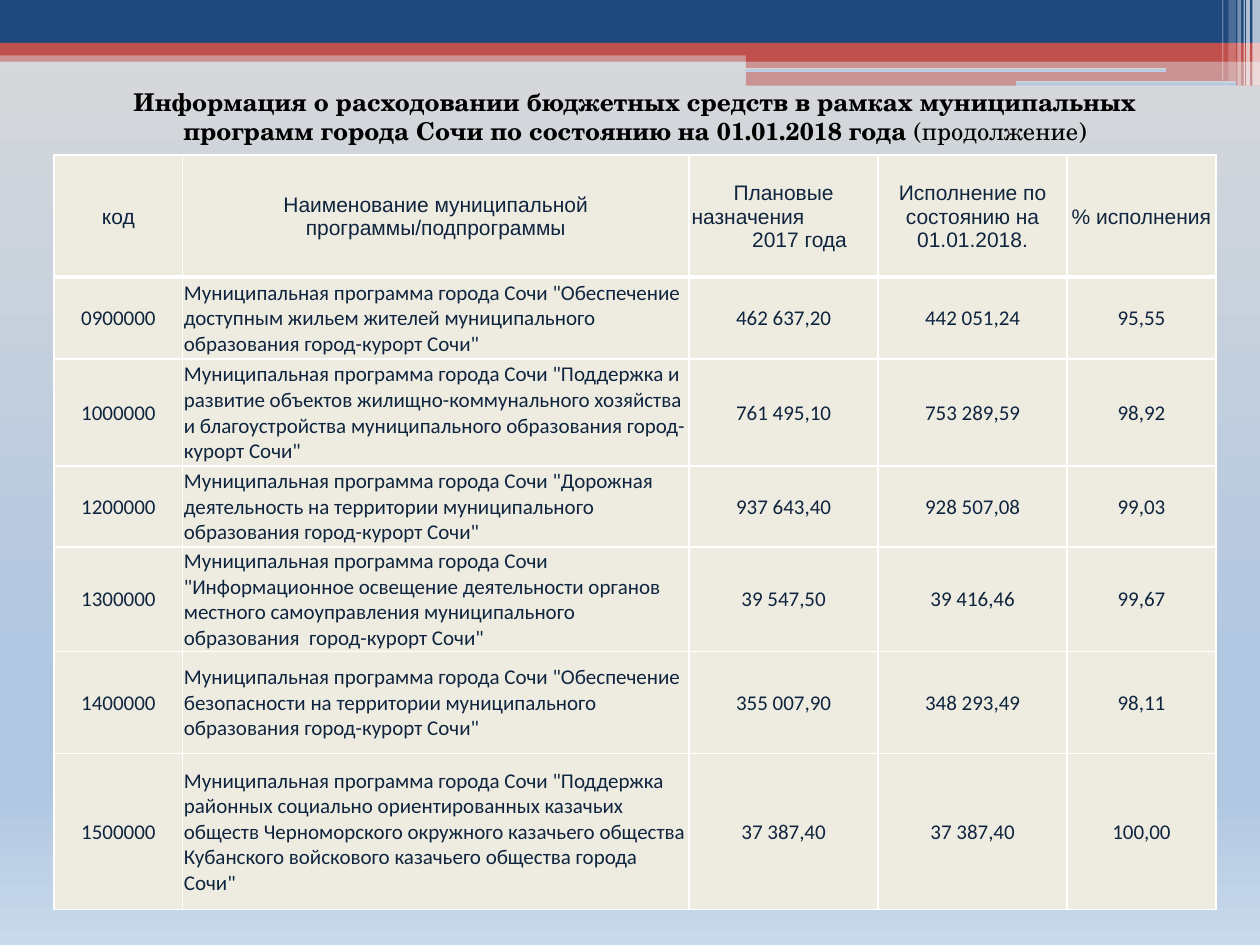
from lxml import etree
from pptx import Presentation
from pptx.dml.color import RGBColor
from pptx.enum.shapes import MSO_SHAPE
from pptx.enum.text import MSO_ANCHOR, PP_ALIGN
from pptx.oxml.ns import qn
from pptx.util import Inches, Pt

RECT, ROUNDED = MSO_SHAPE.RECTANGLE, MSO_SHAPE.ROUNDED_RECTANGLE
LEFT, CENTER = PP_ALIGN.LEFT, PP_ALIGN.CENTER
MIDDLE = MSO_ANCHOR.MIDDLE

NAVY, RED, WHITE, CREAM, INK = "1F497D", "C0504D", "FFFFFF", "EEECE1", "0F243E"
SKY = [(0, "D9D9D9"), (74, "B0C6E1"), (83, "B0C6E1"), (100, "CAD9EB")]

# left, top, width, height, colour, opacity in percent
BANDS = [
    (0, 0.4, 10, 0.09, RED, 50),
    (0, 0, 10, 0.34, NAVY, 100),
    (0, 0.34, 10, 0.1, RED, 100),
    (5.92, 0.39, 4.08, 0.1, RED, 100),
    (5.92, 0.48, 4.08, 0.2, RED, 50),
]
SLOTS = [(5.91, 0.54, 3.35, 0.03), (8.06, 0.64, 1.75, 0.04)]
# left, width, height, opacity in percent
STRIPES = [
    (9.94, 0.06, 0.68, 65), (9.89, 0.03, 0.68, 65), (9.87, 0.01, 0.68, 60),
    (9.82, 0.03, 0.68, 40), (9.75, 0.06, 0.64, 20), (9.7, 0.01, 0.64, 30),
]

COLUMN_WIDTHS = [1.02, 4.02, 1.5, 1.5, 1.18]
ROW_HEIGHTS = [0.97, 0.65, 0.85, 0.64, 0.83, 0.81, 1.24]
HEADINGS = ["код", "Наименование муниципальной программы/подпрограммы", "",
            "Исполнение по состоянию на 01.01.2018.", "% исполнения"]
# Staggered heading of the plan column: text, alignment, left margin
PLAN_HEADING = [("Плановые", CENTER, 0), ("назначения", LEFT, 0.01),
                ("2017 года", LEFT, 0.49)]
PROGRAM = "Муниципальная программа города Сочи "
PROGRAMS = [
    ("0900000", '"Обеспечение доступным жильем жителей муниципального образования '
     'город-курорт Сочи"', "462 637,20", "442 051,24", "95,55"),
    ("1000000", '"Поддержка и развитие объектов жилищно-коммунального хозяйства и '
     'благоустройства муниципального образования город-курорт Сочи"',
     "761 495,10", "753 289,59", "98,92"),
    ("1200000", '"Дорожная деятельность на территории муниципального образования '
     'город-курорт Сочи"', "937 643,40", "928 507,08", "99,03"),
    ("1300000", '"Информационное освещение деятельности органов местного '
     'самоуправления муниципального образования  город-курорт Сочи"',
     "39 547,50", "39 416,46", "99,67"),
    ("1400000", '"Обеспечение безопасности на территории муниципального образования '
     'город-курорт Сочи"', "355 007,90", "348 293,49", "98,11"),
    ("1500000", '"Поддержка районных социально ориентированных казачьих обществ '
     'Черноморского окружного казачьего общества Кубанского войскового казачьего '
     'общества города Сочи"', "37 387,40", "37 387,40", "100,00"),
]


def rgb(color):
    return RGBColor.from_string(color)


def add_text(paragraph, text, font="Calibri", size=12, color=INK, bold=False,
             align=CENTER, margin=0):
    paragraph.alignment = align
    if margin:
        paragraph._p.get_or_add_pPr().set("marL", str(Inches(margin)))
    run = paragraph.add_run()
    run.text = text
    run.font.name, run.font.size, run.font.bold = font, Pt(size), bold
    run.font.color.rgb = rgb(color)


def fill_sky(fill, owner):
    """Vertical gradient with the four sky stops."""
    fill.gradient()
    fill.gradient_angle = 270
    stops = next(owner.iter(qn("a:gsLst")))
    for stop in list(stops):
        stops.remove(stop)
    for position, color in SKY:
        stop = etree.SubElement(stops, qn("a:gs"), pos=str(position * 1000))
        etree.SubElement(stop, qn("a:srgbClr"), val=color)


def add_block(slide, box, kind=RECT, color=None, opacity=100):
    block = slide.shapes.add_shape(kind, *map(Inches, box))
    block.shadow.inherit = False
    block.line.fill.background()
    if color is None:
        fill_sky(block.fill, block.element)
        return
    block.fill.solid()
    block.fill.fore_color.rgb = rgb(color)
    if opacity < 100:
        tint = next(block.element.iter(qn("a:srgbClr")))
        etree.SubElement(tint, qn("a:alpha"), val=str(opacity * 1000))


def add_banner(slide, left, top):
    for x, y, width, height, color, opacity in BANDS:
        add_block(slide, (left + x, top + y, width, height), color=color,
                  opacity=opacity)
    for x, y, width, height in SLOTS:
        add_block(slide, (left + x, top + y, width, height), kind=ROUNDED)
    for x, width, height, opacity in STRIPES:
        add_block(slide, (left + x, top, width, height), color=WHITE,
                  opacity=opacity)


def style_cell(cell, top=1, bottom=1):
    cell.fill.solid()
    cell.fill.fore_color.rgb = rgb(CREAM)
    cell.vertical_anchor = MIDDLE
    cell.margin_left = cell.margin_right = cell.margin_top = Inches(0.01)
    cell.margin_bottom = 0
    properties = cell._tc.get_or_add_tcPr()
    borders = [("L", 1), ("R", 1), ("T", top), ("B", bottom)]
    for index, (side, width) in enumerate(borders):
        line = etree.Element(qn(f"a:ln{side}"), w=str(Pt(width)))
        solid = etree.SubElement(line, qn("a:solidFill"))
        etree.SubElement(solid, qn("a:srgbClr"), val=WHITE)
        properties.insert(index, line)


def add_program_table(slide, left, top, width, height):
    table = slide.shapes.add_table(
        len(ROW_HEIGHTS), len(COLUMN_WIDTHS),
        *map(Inches, (left, top, width, height))).table
    for column, column_width in zip(table.columns, COLUMN_WIDTHS):
        column.width = Inches(column_width)
    for row, row_height in zip(table.rows, ROW_HEIGHTS):
        row.height = Inches(row_height)

    # Heading row
    for index, heading in enumerate(HEADINGS):
        cell = table.cell(0, index)
        style_cell(cell, bottom=3)
        if heading:
            add_text(cell.text_frame.paragraphs[0], heading, font="Arial")
            continue
        for number, (text, align, margin) in enumerate(PLAN_HEADING):
            frame = cell.text_frame
            paragraph = frame.add_paragraph() if number else frame.paragraphs[0]
            add_text(paragraph, text, font="Arial", align=align, margin=margin)

    # Programme rows
    for row_index, (code, name, *amounts) in enumerate(PROGRAMS, start=1):
        for index, text in enumerate([code, PROGRAM + name, *amounts]):
            cell = table.cell(row_index, index)
            style_cell(cell, top=3 if row_index == 1 else 1)
            add_text(cell.text_frame.paragraphs[0], text,
                     align=LEFT if index == 1 else CENTER)


def add_title(slide, left, top, width, height):
    title = slide.shapes.add_textbox(*map(Inches, (left, top, width, height)))
    title.text_frame.word_wrap = True
    paragraph = title.text_frame.paragraphs[0]
    style = {"font": "TeX Gyre Schola", "size": 14, "color": "000000"}
    add_text(paragraph, "Информация о расходовании бюджетных средств в рамках "
             "муниципальных программ города Сочи по состоянию на 01.01.2018 года ",
             bold=True, **style)
    add_text(paragraph, "(продолжение)", **style)


def main():
    presentation = Presentation()
    presentation.slide_width, presentation.slide_height = Inches(10), Inches(7.5)
    slide = presentation.slides.add_slide(presentation.slide_layouts[6])
    fill_sky(slide.background.fill, slide.element)
    add_banner(slide, 0, 0)
    add_program_table(slide, 0.43, 1.23, sum(COLUMN_WIDTHS), sum(ROW_HEIGHTS))
    add_title(slide, 0.59, 0.64, 8.9, 0.57)
    presentation.save("out.pptx")


if __name__ == "__main__":
    main()
